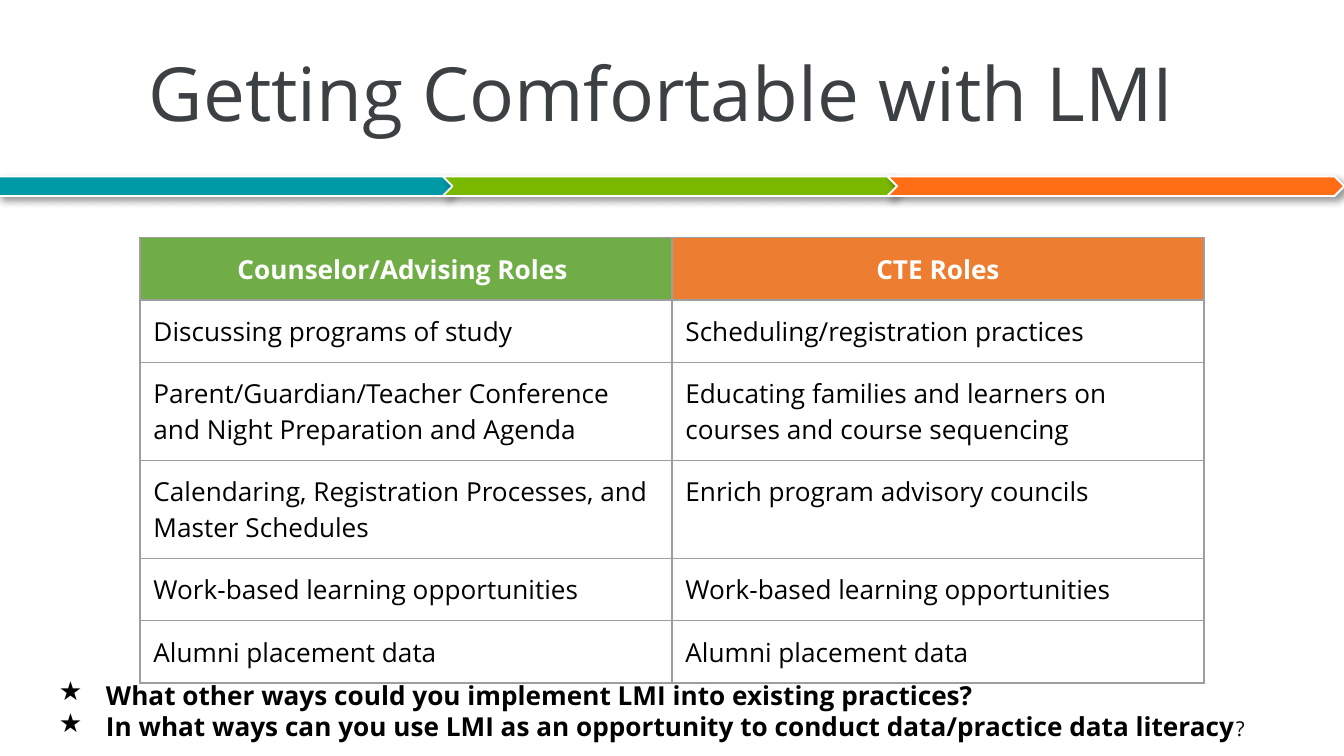
from lxml import etree
from pptx import Presentation
from pptx.dml.color import RGBColor
from pptx.enum.shapes import MSO_SHAPE
from pptx.enum.text import MSO_ANCHOR, PP_ALIGN
from pptx.oxml import parse_xml
from pptx.oxml.ns import qn
from pptx.util import Pt

PENTAGON, CHEVRON = MSO_SHAPE.PENTAGON, MSO_SHAPE.CHEVRON
LEFT, CENTER = PP_ALIGN.LEFT, PP_ALIGN.CENTER
TOP, MIDDLE = MSO_ANCHOR.TOP, MSO_ANCHOR.MIDDLE
NS = 'xmlns:a="http://schemas.openxmlformats.org/drawingml/2006/main"'


def rgb(hex_color):
    return RGBColor.from_string(hex_color)


class SlideBuilder:
    font = "Open Sans"
    white, black, title_gray, grid_gray = "FFFFFF", "000000", "3C4043", "9E9E9E"
    body_size = 14

    def __init__(self, slide):
        self.slide = slide

    def add_run(self, paragraph, text, size=body_size, color=black, bold=False):
        run = paragraph.add_run()
        run.text = text
        run.font.name = self.font
        run.font.size = Pt(size)
        run.font.bold = bold
        run.font.color.rgb = rgb(color)

    def ribbon(self, preset, left, top, width, height, color):
        band = self.slide.shapes.add_shape(
            preset, Pt(left), Pt(top), Pt(width), Pt(height))
        band.adjustments[0] = 0.5
        band.fill.solid()
        band.fill.fore_color.rgb = rgb(color)
        band.line.color.rgb = rgb(self.white)
        band.line.width = Pt(1)
        band.shadow.inherit = False
        effects = band._element.spPr.find(qn("a:effectLst"))
        effects.append(parse_xml(
            f'<a:outerShdw {NS} blurRad="{Pt(4)}" dist="{Pt(3)}" dir="2700000" '
            f'algn="tl" rotWithShape="0"><a:srgbClr val="{self.black}">'
            '<a:alpha val="40000"/></a:srgbClr></a:outerShdw>'))

    def text_frame(self, left, top, width, height, inset_y, anchor=TOP):
        box = self.slide.shapes.add_textbox(Pt(left), Pt(top), Pt(width), Pt(height))
        frame = box.text_frame
        frame.word_wrap = True
        frame.vertical_anchor = anchor
        frame.margin_left = frame.margin_right = Pt(7.2)
        frame.margin_top = frame.margin_bottom = Pt(inset_y)
        return frame

    def title(self, text, left, top, width, height):
        frame = self.text_frame(left, top, width, height, 3.6, MIDDLE)
        paragraph = frame.paragraphs[0]
        paragraph.alignment = CENTER
        paragraph.line_spacing = 0.9
        paragraph.space_before = Pt(10)
        self.add_run(paragraph, text, 40, self.title_gray)

    def starred_list(self, items, left, top, width, height):
        frame = self.text_frame(left, top, width, height, 7.2)
        for index, runs in enumerate(items):
            paragraph = frame.paragraphs[0] if index == 0 else frame.add_paragraph()
            props = paragraph._p.get_or_add_pPr()
            props.set("marL", str(Pt(36)))
            props.set("indent", str(Pt(-25.2)))
            color = etree.SubElement(props, qn("a:buClr"))
            etree.SubElement(color, qn("a:srgbClr"), val=self.black)
            etree.SubElement(props, qn("a:buChar"), char="★")
            for text, size, bold in runs:
                self.add_run(paragraph, text, size, bold=bold)

    def cell(self, cell, text, header_color=None):
        cell.margin_left = cell.margin_right = Pt(7.2)
        cell.margin_top = cell.margin_bottom = Pt(7.2)
        props = cell._tc.get_or_add_tcPr()
        for side in ("lnL", "lnR", "lnT", "lnB"):
            props.append(parse_xml(
                f'<a:{side} {NS} w="{Pt(0.75)}"><a:solidFill>'
                f'<a:srgbClr val="{self.grid_gray}"/></a:solidFill></a:{side}>'))
        paragraph = cell.text_frame.paragraphs[0]
        if header_color:
            cell.fill.solid()
            cell.fill.fore_color.rgb = rgb(header_color)
            paragraph.alignment = CENTER
            self.add_run(paragraph, text, color=self.white, bold=True)
        else:
            cell.fill.background()
            paragraph.alignment = LEFT
            self.add_run(paragraph, text)

    def table(self, rows, header_colors, left, top, column_width, row_heights):
        columns = len(header_colors)
        table = self.slide.shapes.add_table(
            len(rows), columns, Pt(left), Pt(top),
            Pt(column_width * columns), Pt(sum(row_heights))).table
        table.first_row = table.horz_banding = False
        for column in table.columns:
            column.width = Pt(column_width)
        for r, (texts, height) in enumerate(zip(rows, row_heights)):
            table.rows[r].height = Pt(height)
            for c, text in enumerate(texts):
                self.cell(table.cell(r, c), text, header_colors[c] if r == 0 else None)


def main():
    prs = Presentation()
    prs.slide_width, prs.slide_height = Pt(720), Pt(405)
    builder = SlideBuilder(prs.slides.add_slide(prs.slide_layouts[6]))

    # Ribbon under the title
    ribbon = [(PENTAGON, "009AA6"), (CHEVRON, "7AB800"), (CHEVRON, "FF6D14")]
    for index, (preset, color) in enumerate(ribbon):
        builder.ribbon(preset, -1 + 238.2 * index, 94.5, 244.8, 10.5, color)

    # Title
    builder.title("Getting Comfortable with LMI", 8, 13, 692.6, 78.5)

    # Roles table
    roles = [
        ("Counselor/Advising Roles ", "CTE Roles"),
        ("Discussing programs of study", "Scheduling/registration practices"),
        ("Parent/Guardian/Teacher Conference and Night Preparation and Agenda",
         "Educating families and learners on courses and course sequencing"),
        ("Calendaring, Registration Processes, and Master Schedules",
         "Enrich program advisory councils"),
        ("Work-based learning opportunities", "Work-based learning opportunities"),
        ("Alumni placement data", "Alumni placement data"),
    ]
    one_line, two_lines = 33.4, 52.5
    heights = [one_line, one_line, two_lines, two_lines, one_line, one_line]
    builder.table(roles, ["70AD47", "ED7D31"], 75, 127.3, 285, heights)

    # Discussion questions
    builder.starred_list([
        [("What other ways could you implement LMI into existing practices?", 14, True)],
        [("In what ways can you use LMI as an opportunity to conduct "
          "data/practice data literacy", 14, True), ("?", 11, False)],
    ], 13.7, 356.5, 663, 48.5)

    prs.save("out.pptx")


if __name__ == "__main__":
    main()
